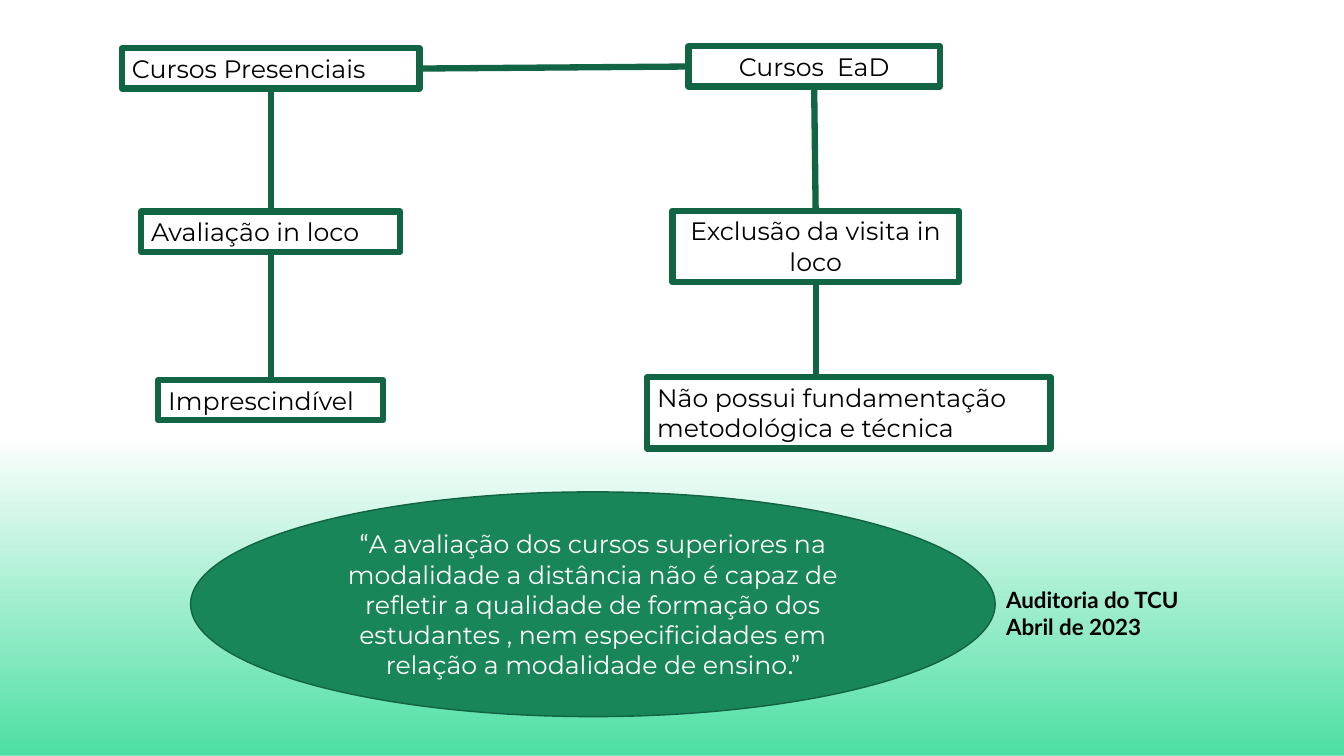
from dataclasses import dataclass
from enum import IntEnum

from lxml import etree
from pptx import Presentation
from pptx.dml.color import RGBColor
from pptx.enum import shapes, text
from pptx.oxml import ns
from pptx.util import Inches, Pt


@dataclass(frozen=True)
class Theme:
    body_font: str = "Montserrat"
    accent_font: str = "Lato"
    body_size: int = 18
    source_size: int = 16
    box_line: float = 4.5
    green: RGBColor = RGBColor(0x12, 0x65, 0x43)
    ellipse_fill: RGBColor = RGBColor(0x18, 0x86, 0x59)
    ellipse_line: RGBColor = RGBColor(0x12, 0x63, 0x42)
    mint: RGBColor = RGBColor(0x4C, 0xDF, 0xA3)
    black: RGBColor = RGBColor(0, 0, 0)
    white: RGBColor = RGBColor(0xFF, 0xFF, 0xFF)


THEME = Theme()
LEFT = text.PP_ALIGN.LEFT
CENTER = text.PP_ALIGN.CENTER


class Side(IntEnum):
    """Connection sites of a rectangle."""
    TOP = 0
    LEFT = 1
    BOTTOM = 2
    RIGHT = 3


@dataclass(frozen=True)
class Box:
    label: str
    left: float
    top: float
    width: float
    height: float = 0.4
    align: text.PP_ALIGN = LEFT


@dataclass(frozen=True)
class Link:
    start: str
    end: str
    start_side: Side = Side.BOTTOM
    end_side: Side = Side.TOP
    end_x: float | None = None  # set where the line does not meet the middle of the side


BOXES = {
    "on_site": Box("Cursos Presenciais", 1.21, 0.48, 2.95),
    "distance": Box("Cursos  EaD", 6.83, 0.46, 2.49, align=CENTER),
    "visit": Box("Avaliação in loco", 1.4, 2.1, 2.57),
    "no_visit": Box("Exclusão da visita in loco", 6.67, 2.09, 2.84, 0.71, CENTER),
    "essential": Box("Imprescindível", 1.57, 3.77, 2.23),
    "unfounded": Box("Não possui fundamentação metodológica e técnica", 6.42, 3.74, 4, 0.71),
}
LINKS = [
    Link("on_site", "distance", Side.RIGHT, Side.LEFT),
    Link("on_site", "visit"),
    Link("visit", "essential"),
    Link("distance", "no_visit"),
    Link("no_visit", "unfounded", end_x=8.09),
]
QUOTE = [
    ("“", THEME.accent_font),
    ("A avaliação dos cursos superiores na modalidade a distância não é capaz de "
     "refletir a qualidade de formação dos estudantes , nem especificidades em "
     "relação a modalidade de ensino", THEME.body_font),
    (".”", THEME.accent_font),
]
SOURCE_LINES = ["Auditoria do TCU", "Abril de 2023"]


def add_background(slide) -> None:
    """Fade from transparent to mint at the foot of the slide."""
    band = slide.shapes.add_shape(
        shapes.MSO_SHAPE.RECTANGLE, 0, Inches(3.84), Inches(13.33), Inches(3.66))
    band.shadow.inherit = False
    band.line.fill.background()
    band.fill.gradient()
    band.fill.gradient_angle = 270
    for stop, position in zip(band.fill.gradient_stops, (0.14, 1)):
        stop.color.rgb = THEME.mint
        stop.position = position
    first_color = next(band._element.iter(ns.qn("a:srgbClr")))
    etree.SubElement(first_color, ns.qn("a:alpha"), val="0")


def add_text_box(slide, left: float, top: float, width: float, height: float):
    shape = slide.shapes.add_textbox(
        Inches(left), Inches(top), Inches(width), Inches(height))
    shape.text_frame.word_wrap = True
    shape.text_frame.auto_size = text.MSO_AUTO_SIZE.SHAPE_TO_FIT_TEXT
    return shape


def add_box(slide, box: Box):
    shape = add_text_box(slide, box.left, box.top, box.width, box.height)
    shape.line.color.rgb = THEME.green
    shape.line.width = Pt(THEME.box_line)
    paragraph = shape.text_frame.paragraphs[0]
    paragraph.text = box.label
    paragraph.alignment = box.align
    paragraph.font.name = THEME.body_font
    paragraph.font.size = Pt(THEME.body_size)
    paragraph.font.color.rgb = THEME.black
    return shape


def add_link(slide, link: Link, box_shapes: dict) -> None:
    end_shape = box_shapes[link.end]
    connector = slide.shapes.add_connector(shapes.MSO_CONNECTOR.STRAIGHT, 0, 0, 0, 0)
    connector.begin_connect(box_shapes[link.start], link.start_side)
    if link.end_x is None:
        connector.end_connect(end_shape, link.end_side)
    else:
        connector.end_x, connector.end_y = Inches(link.end_x), end_shape.top
    connector.line.color.rgb = THEME.green
    connector.line.width = Pt(THEME.box_line)
    etree.SubElement(connector._element.spPr, ns.qn("a:effectLst"))


def add_quote(slide) -> None:
    ellipse = slide.shapes.add_shape(
        shapes.MSO_SHAPE.OVAL, Inches(1.89), Inches(4.88), Inches(7.98), Inches(2.23))
    ellipse.shadow.inherit = False
    ellipse.fill.solid()
    ellipse.fill.fore_color.rgb = THEME.ellipse_fill
    ellipse.line.color.rgb = THEME.ellipse_line
    ellipse.line.width = Pt(1)
    ellipse.text_frame.word_wrap = True
    ellipse.text_frame.vertical_anchor = text.MSO_ANCHOR.MIDDLE
    paragraph = ellipse.text_frame.paragraphs[0]
    paragraph.alignment = CENTER
    paragraph.font.size = Pt(THEME.body_size)
    paragraph.font.color.rgb = THEME.white
    for words, font_name in QUOTE:
        run = paragraph.add_run()
        run.text = words
        run.font.name = font_name


def add_source(slide) -> None:
    frame = add_text_box(slide, 9.88, 5.77, 2.32, 0.66).text_frame
    frame.text = "\n".join(SOURCE_LINES)
    for paragraph in frame.paragraphs:
        paragraph.font.name = THEME.accent_font
        paragraph.font.size = Pt(THEME.source_size)
        paragraph.font.bold = True
        paragraph.font.color.rgb = THEME.black


def main() -> None:
    presentation = Presentation()
    presentation.slide_width = Inches(13.33)
    presentation.slide_height = Inches(7.5)
    blank_layout = presentation.slide_layouts[6]
    slide = presentation.slides.add_slide(blank_layout)
    add_background(slide)
    box_shapes = {name: add_box(slide, box) for name, box in BOXES.items()}
    for link in LINKS:
        add_link(slide, link, box_shapes)
    add_quote(slide)
    add_source(slide)
    presentation.save("out.pptx")


if __name__ == "__main__":
    main()
